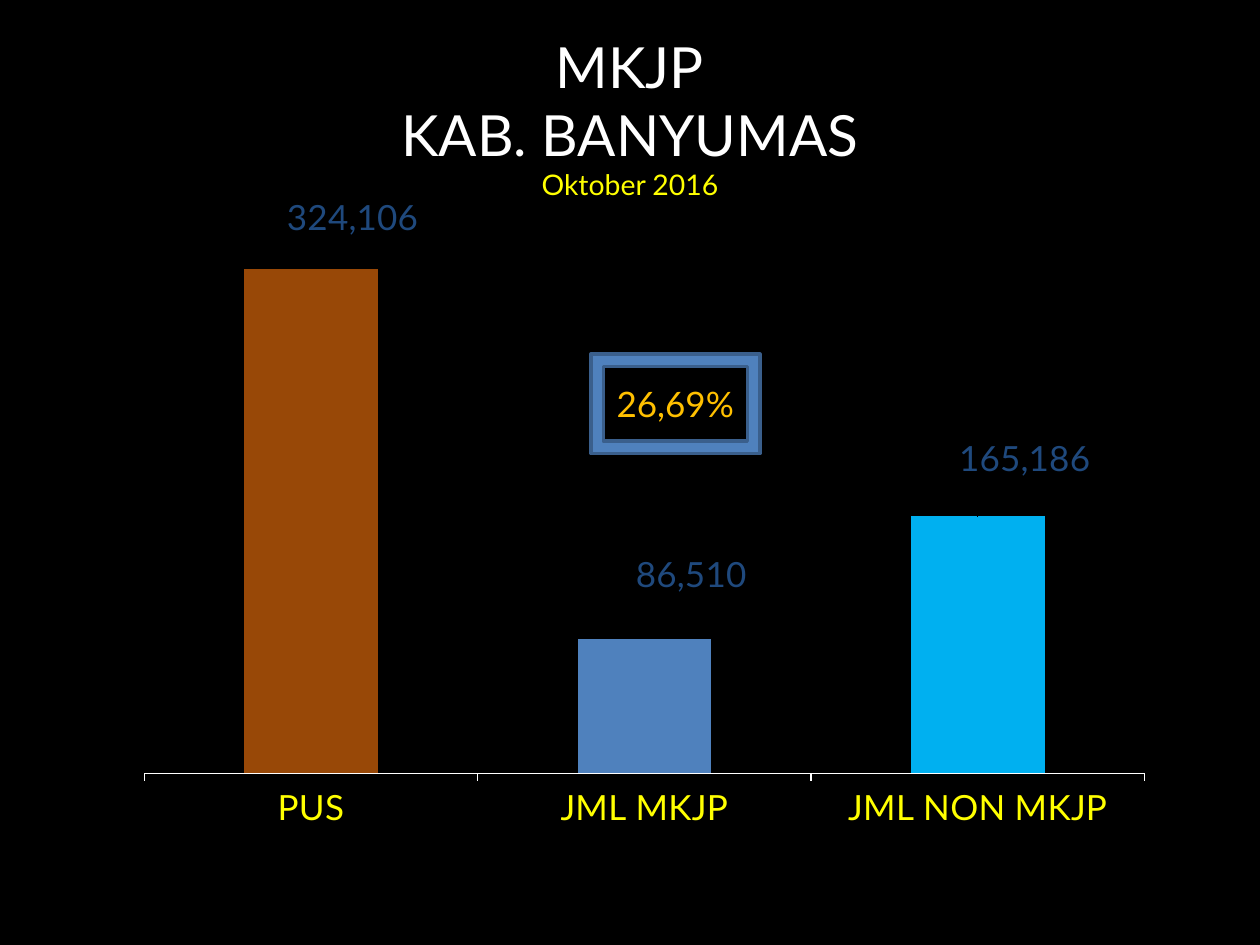
from dataclasses import dataclass

from lxml.etree import SubElement
from pptx import Presentation
from pptx.chart.data import CategoryChartData
from pptx.dml.color import RGBColor
from pptx.enum.chart import XL_CHART_TYPE, XL_LABEL_POSITION, XL_TICK_LABEL_POSITION, XL_TICK_MARK
from pptx.enum.shapes import MSO_SHAPE
from pptx.enum.text import MSO_ANCHOR, PP_ALIGN
from pptx.oxml import parse_xml
from pptx.oxml.ns import nsdecls, qn
from pptx.util import Inches, Pt


@dataclass(frozen=True)
class Theme:
    font: str = "Lato"
    black: str = "000000"
    white: str = "FFFFFF"
    yellow: str = "FFFF00"
    gold: str = "FFC000"
    navy: str = "1F497D"
    blue: str = "4F81BD"
    edge: str = "3A5F8C"
    brown: str = "984807"
    sky: str = "00B0F0"
    title: float = 32.4
    subtitle: float = 16.2
    base: float = 14
    label: float = 20


THEME = Theme()
NUMBER_FORMAT = "#,##0"

# Category, value, bar colour, label shift as a share of the chart size
BARS = [
    ("PUS", 324106, THEME.brown, (0.04, -0.04)),
    ("JML MKJP", 86510, THEME.blue, (0.045, -0.06)),
    ("JML NON MKJP", 165186, THEME.sky, (0.045, -0.05)),
]


def rgb(value):
    return RGBColor.from_string(value)


def set_font(font, size, color):
    for name, value in {"name": THEME.font, "size": Pt(size), "bold": False}.items():
        setattr(font, name, value)
    font.color.rgb = rgb(color)


def set_frame(tf, margin):
    values = {"word_wrap": True, "vertical_anchor": MSO_ANCHOR.MIDDLE}
    values.update({f"margin_{side}": margin for side in ("left", "right", "top", "bottom")})
    for name, value in values.items():
        setattr(tf, name, value)
    p = tf.paragraphs[0]
    p.alignment = PP_ALIGN.CENTER
    return p


def add_run(p, text, size, color):
    r = p.add_run()
    r.text = text
    set_font(r.font, size, color)


def add_title(s, box):
    p = set_frame(s.shapes.add_textbox(*box).text_frame, Inches(0.05))
    for line in ("MKJP", "KAB. BANYUMAS"):
        add_run(p, line, THEME.title, THEME.white)
        p.add_line_break()
    add_run(p, "Oktober 2016", THEME.subtitle, THEME.yellow)


def manual_layout(**values):
    layout = parse_xml(f"<c:layout {nsdecls('c')}><c:manualLayout/></c:layout>")
    for name, value in values.items():
        SubElement(layout[0], qn(f"c:{name}")).set("val", str(value))
    return layout


def style_axes(chart):
    cat, val = chart.category_axis, chart.value_axis
    cat.major_tick_mark = XL_TICK_MARK.OUTSIDE
    cat.tick_label_position = XL_TICK_LABEL_POSITION.LOW
    cat.format.line.color.rgb = rgb(THEME.white)
    set_font(cat.tick_labels.font, THEME.label, THEME.yellow)
    for name, value in {"visible": False, "has_major_gridlines": False,
                        "minimum_scale": 0, "maximum_scale": 350000}.items():
        setattr(val, name, value)
    val.tick_labels.number_format = NUMBER_FORMAT
    val.tick_labels.number_format_is_linked = False


def style_bars(series):
    series.format.fill.solid()
    series.format.fill.fore_color.rgb = rgb(THEME.blue)
    labels = series.data_labels
    for name, value in {"show_value": True, "number_format": NUMBER_FORMAT,
                        "number_format_is_linked": False,
                        "position": XL_LABEL_POSITION.OUTSIDE_END}.items():
        setattr(labels, name, value)
    set_font(labels.font, THEME.label, THEME.navy)
    for i, (_, _, color, _) in enumerate(BARS):
        point = series.points[i]
        point.format.fill.solid()
        point.format.fill.fore_color.rgb = rgb(color)
        set_font(point.data_label.font, THEME.label, THEME.navy)
        point.data_label.position = XL_LABEL_POSITION.OUTSIDE_END


def shift_labels(chart):
    labels = chart._chartSpace.iter(qn("c:dLbl"))
    for label, (_, _, _, (dx, dy)) in zip(labels, BARS):
        layout = manual_layout(x=dx, y=dy)
        label.find(qn("c:idx")).addnext(layout)
        layout.addnext(parse_xml(
            f'<c:numFmt {nsdecls("c")} formatCode="{NUMBER_FORMAT}" sourceLinked="0"/>'))


def place_plot(chart):
    area = chart._chartSpace.find(f".//{qn('c:plotArea')}")
    old = area.find(qn("c:layout"))
    if old is not None:
        area.remove(old)
    area.insert(0, manual_layout(layoutTarget="inner", xMode="edge", yMode="edge",
                                 x=0.02, y=0.04, w=0.96, h=0.855))


def add_bar_chart(s, box):
    data = CategoryChartData(number_format=NUMBER_FORMAT)
    data.categories = [bar[0] for bar in BARS]
    data.add_series("Series 1", [bar[1] for bar in BARS])
    chart = s.shapes.add_chart(XL_CHART_TYPE.COLUMN_CLUSTERED, *box, data).chart
    chart.has_legend = False
    chart.has_title = False
    set_font(chart.font, THEME.base, THEME.white)
    plot = chart.plots[0]
    plot.gap_width = 150
    plot.vary_by_categories = False
    style_axes(chart)
    style_bars(plot.series[0])
    shift_labels(chart)
    place_plot(chart)


def add_share_frame(s, box):
    sp = s.shapes.add_shape(MSO_SHAPE.FRAME, *box)
    sp.shadow.inherit = False
    sp.fill.solid()
    sp.fill.fore_color.rgb = rgb(THEME.blue)
    sp.line.color.rgb = rgb(THEME.edge)
    sp.line.width = Pt(2)
    p = set_frame(sp.text_frame, Inches(0.05))
    add_run(p, "26,69%", THEME.label, THEME.gold)


def main():
    prs = Presentation()
    prs.slide_width, prs.slide_height = Inches(10), Inches(7.5)
    s = prs.slides.add_slide(prs.slide_layouts[6])
    s.background.fill.solid()
    s.background.fill.fore_color.rgb = rgb(THEME.black)

    # Heading, columns and the framed share
    regions = [
        (add_title, (0.5, 0.3, 9, 1.25)),
        (add_bar_chart, (0.98, 1.55, 8.27, 5.12)),
        (add_share_frame, (4.69, 2.81, 1.34, 0.79)),
    ]
    for add_region, box in regions:
        add_region(s, [Inches(v) for v in box])
    prs.save("out.pptx")


if __name__ == "__main__":
    main()
